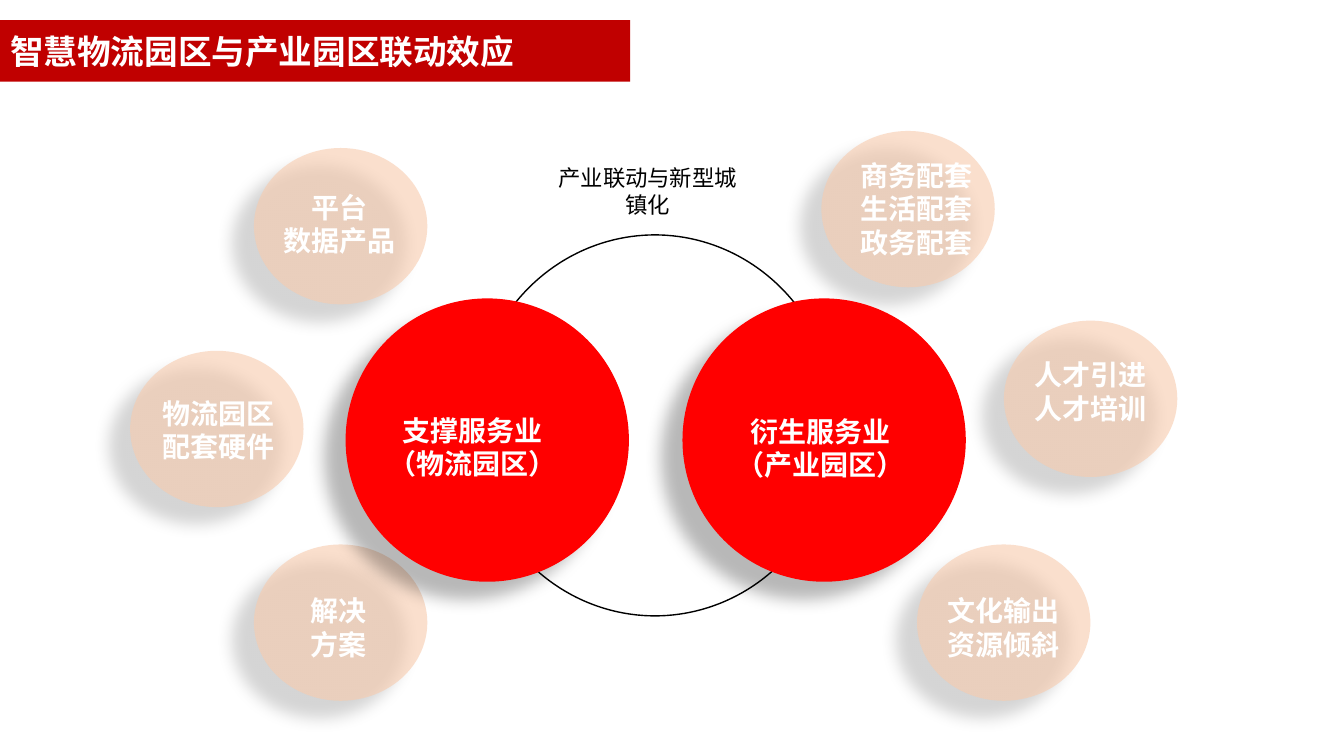
from dataclasses import dataclass

from lxml import etree
from pptx import Presentation
from pptx.dml.color import RGBColor
from pptx.enum.shapes import MSO_SHAPE
from pptx.enum.text import MSO_ANCHOR, MSO_AUTO_SIZE, PP_ALIGN
from pptx.oxml.ns import qn
from pptx.shapes.autoshape import Shape
from pptx.slide import Slide
from pptx.text.text import TextFrame
from pptx.util import Cm, Pt

OVAL = MSO_SHAPE.OVAL
LEFT, CENTER = PP_ALIGN.LEFT, PP_ALIGN.CENTER
MIDDLE = MSO_ANCHOR.MIDDLE
FIXED = MSO_AUTO_SIZE.NONE


@dataclass(frozen=True)
class Theme:
    banner: str = "C00000"
    hub: str = "FF0000"
    moon: str = "F8CBAD"
    dark: str = "000000"
    light: str = "FFFFFF"
    font: str = "Calibri"
    han: str = "Noto Sans CJK SC"
    title: int = 24
    label: int = 20
    note: int = 16


@dataclass(frozen=True)
class Kind:
    """Look of one group of circles; lengths in cm, alpha in percent."""
    width: float
    height: float
    fill: str
    alpha: int


@dataclass(frozen=True)
class Node:
    """A circle and its label, each placed by its left top corner in cm."""
    kind: Kind
    left: float
    top: float
    text_left: float
    text_top: float
    text: str


THEME = Theme()
MOON = Kind(4.37, 3.94, THEME.moon, 60)
HUB = Kind(7.14, 7.14, THEME.hub, 100)
LABEL_WIDTH = 7.16
LINE_HEIGHT = 0.85
NODES = [
    Node(MOON, 3.28, 8.84, 1.93, 9.86, "物流园区\n配套硬件"),
    Node(MOON, 6.4, 13.72, 4.95, 14.83, "解决\n方案"),
    Node(MOON, 6.4, 3.73, 4.98, 4.67, "平台\n数据产品"),
    Node(MOON, 20.7, 3.3, 19.51, 3.86, "商务配套\n生活配套\n政务配套"),
    Node(MOON, 25.3, 8.08, 23.9, 8.89, "人才引进\n人才培训"),
    Node(MOON, 23.11, 13.72, 21.72, 14.83, "文化输出\n资源倾斜"),
    Node(HUB, 8.71, 7.52, 8.33, 10.29, "支撑服务业\n（物流园区）"),
    Node(HUB, 17.2, 7.52, 17.09, 10.31, "衍生服务业\n（产业园区）"),
]


def paint(shape: Shape, color: str) -> None:
    shape.fill.solid()
    shape.fill.fore_color.rgb = RGBColor.from_string(color)


def fade(color: etree._Element, percent: int) -> None:
    etree.SubElement(color, qn("a:alpha"), val=str(percent * 1000))


def cast(shape: Shape) -> None:
    """Give the shape a soft shadow to its lower left."""
    shape.shadow.inherit = False
    effects = shape._element.spPr.find(qn("a:effectLst"))
    shade = etree.SubElement(
        effects, qn("a:outerShdw"), blurRad=str(Pt(11.8)),
        dist=str(Pt(19.7)), dir=str(141 * 60000), rotWithShape="0")
    fade(etree.SubElement(shade, qn("a:srgbClr"), val=THEME.dark), 28)


def style(frame: TextFrame, size: int, color: str, bold: bool,
          align: PP_ALIGN, font: str) -> None:
    frame.word_wrap = True
    for para in frame.paragraphs:
        para.alignment = align
        for run in para.runs:
            run.font.name = font
            run.font.size = Pt(size)
            run.font.bold = bold
            run.font.color.rgb = RGBColor.from_string(color)
            east = etree.SubElement(run.font._element, qn("a:ea"))
            east.set("typeface", THEME.han)


def add_title(slide: Slide, text: str) -> None:
    title = slide.shapes.title
    title.left, title.top = Cm(0), Cm(0.51)
    title.width, title.height = Cm(15.88), Cm(1.55)
    paint(title, THEME.banner)
    frame = title.text_frame
    frame.text = text
    frame.auto_size = FIXED
    frame.vertical_anchor = MIDDLE
    style(frame, THEME.title, THEME.light, True, LEFT, THEME.han)


def add_ring(slide: Slide) -> None:
    ring = slide.shapes.add_shape(
        OVAL, Cm(11.91), Cm(5.92), Cm(9.19), Cm(9.6))
    ring.fill.background()
    ring.line.color.rgb = RGBColor.from_string(THEME.dark)
    ring.line.width = Pt(1)
    ring.shadow.inherit = False


def add_disc(slide: Slide, node: Node) -> None:
    kind = node.kind
    disc = slide.shapes.add_shape(
        OVAL, Cm(node.left), Cm(node.top), Cm(kind.width), Cm(kind.height))
    paint(disc, kind.fill)
    if kind.alpha < 100:
        fade(disc._element.spPr.find(qn("a:solidFill"))[0], kind.alpha)
    disc.line.fill.background()
    cast(disc)


def add_label(slide: Slide, node: Node) -> None:
    lines = node.text.count("\n") + 1
    box = slide.shapes.add_textbox(
        Cm(node.text_left), Cm(node.text_top),
        Cm(LABEL_WIDTH), Cm(LINE_HEIGHT * lines + 0.26))
    box.text_frame.text = node.text
    style(box.text_frame, THEME.label, THEME.light, True, CENTER, THEME.font)


def add_note(slide: Slide, text: str) -> None:
    box = slide.shapes.add_textbox(Cm(13.67), Cm(4.01), Cm(5.31), Cm(1.63))
    box.text_frame.text = text
    style(box.text_frame, THEME.note, THEME.dark, False, CENTER, THEME.font)


def main() -> None:
    deck = Presentation()
    deck.slide_width, deck.slide_height = Cm(33.87), Cm(19.05)
    slide = deck.slides.add_slide(deck.slide_layouts[5])
    add_title(slide, "智慧物流园区与产业园区联动效应")
    add_ring(slide)
    for node in NODES:
        add_disc(slide, node)
    for node in NODES:
        add_label(slide, node)
    add_note(slide, "产业联动与新型城镇化")
    deck.save("out.pptx")


if __name__ == "__main__":
    main()
